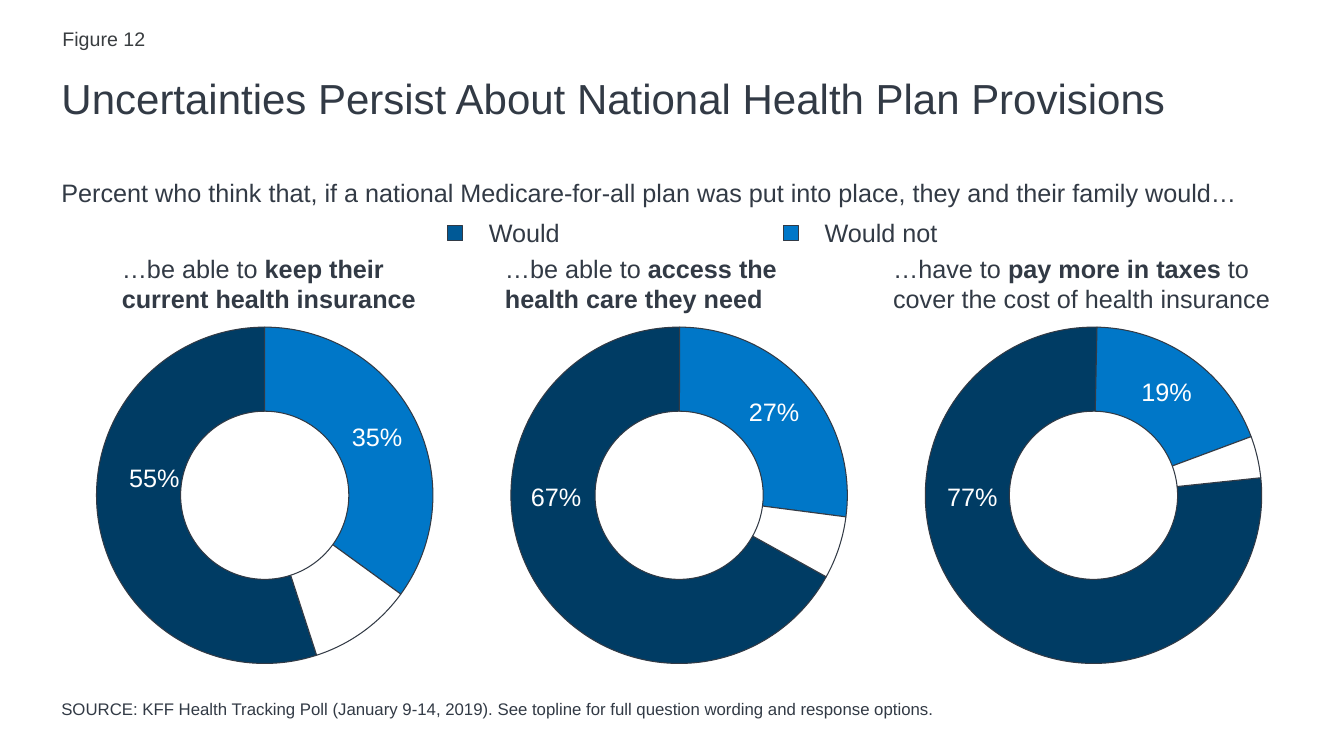
from lxml import etree
from pptx import Presentation
from pptx.chart.data import CategoryChartData
from pptx.dml.color import RGBColor
from pptx.enum.chart import XL_CHART_TYPE
from pptx.enum.shapes import MSO_SHAPE
from pptx.enum.text import MSO_ANCHOR, PP_ALIGN
from pptx.oxml.ns import qn
from pptx.util import Inches, Pt

DOUGHNUT = XL_CHART_TYPE.DOUGHNUT
RECTANGLE = MSO_SHAPE.RECTANGLE
TOP, BOTTOM = MSO_ANCHOR.TOP, MSO_ANCHOR.BOTTOM
LEFT = PP_ALIGN.LEFT

INK = RGBColor(0x32, 0x3A, 0x45)
GREY = RGBColor(0x39, 0x3D, 0x40)
NAVY = RGBColor(0x00, 0x3C, 0x64)
LEGEND_BLUE = RGBColor(0x00, 0x59, 0x96)
BLUE = RGBColor(0x00, 0x77, 0xC8)
WHITE = RGBColor(0xFF, 0xFF, 0xFF)
FONT = "Arial"

CHART_WIDTH, CHART_HEIGHT, CHART_PITCH = 7.1, 4.07, 4.11
RING_LAYOUT = {"layoutTarget": "inner", "xMode": "edge", "yMode": "edge",
               "x": 0.22, "y": 0.08, "w": 0.48, "h": 0.82}

# Caption box (left, width), caption runs (text, bold), shares, start angle, "Would" label shift
PROVISIONS = [
    ((1.11, 3.54), [("…be able to ", False), ("keep their current health insurance", True)],
     (0.55, 0.35, 0.10), 162, (0.02, -0.09)),
    ((4.91, 3.59), [("…be able to ", False), ("access the health care they need", True)],
     (0.67, 0.27, 0.06), 119, (-0.02, -0.15)),
    ((8.76, 4.31), [("…have to ", False), ("pay more in taxes ", True),
                    ("to cover the cost of health insurance", False)],
     (0.77, 0.19, 0.04), 84, (-0.05, -0.22)),
]


def set_format(target, values):
    for name, value in values.items():
        setattr(target, name, value)


def format_font(font, size, color, bold=False):
    set_format(font, {"name": FONT, "size": Pt(size), "bold": bold})
    font.color.rgb = color


def write_runs(text_frame, runs, size, color=INK, anchor=TOP):
    set_format(text_frame, {"word_wrap": True, "vertical_anchor": anchor})
    paragraph = text_frame.paragraphs[0]
    paragraph.alignment = LEFT
    for text, bold in runs:
        run = paragraph.add_run()
        run.text = text
        format_font(run.font, size, color, bold)


def add_text(slide, box, runs, size, color=INK, anchor=TOP):
    shape = slide.shapes.add_textbox(*map(Inches, box))
    write_runs(shape.text_frame, runs, size, color, anchor)


def add_heading(slide):
    title = slide.shapes.title
    set_format(title, {"left": Inches(0.51), "top": Inches(0.64),
                       "width": Inches(12.14), "height": Inches(0.92)})
    title.text_frame.margin_top = Inches(0.08)
    write_runs(title.text_frame,
               [("Uncertainties Persist About National Health Plan Provisions", False)], 30)
    add_text(slide, (0.52, 0.22, 3.11, 0.4), [("Figure 12", False)], 14, GREY)
    question = ("Percent who think that, if a national Medicare-for-all plan was put into place, "
                "they and their family would…")
    add_text(slide, (0.51, 1.71, 11.98, 0.4), [(question, False)], 18)


def add_legend_entry(slide, box, label, color):
    left, top, width, height = box
    marker = slide.shapes.add_shape(RECTANGLE, Inches(left), Inches(top + 0.13),
                                    Inches(0.15), Inches(0.15))
    marker.shadow.inherit = False
    marker.fill.solid()
    marker.fill.fore_color.rgb = color
    marker.line.color.rgb = INK
    marker.line.width = Pt(0.75)
    add_text(slide, (left + 0.31, top, width - 0.31, height), [(label, False)], 18)


def set_layout(parent, index, values):
    """Give a chart element a manual layout as its child at the index."""
    for existing in parent.findall(qn("c:layout")):
        parent.remove(existing)
    layout = etree.Element(qn("c:layout"))
    manual = etree.SubElement(layout, qn("c:manualLayout"))
    for name, value in values.items():
        etree.SubElement(manual, qn(f"c:{name}")).set("val", str(value))
    parent.insert(index, layout)


def add_ring(slide, box, shares, start_angle, label_shift):
    data = CategoryChartData(number_format="0%")
    data.categories = ["1", "2", "3"]
    data.add_series("Series 1", shares)
    chart = slide.shapes.add_chart(DOUGHNUT, *map(Inches, box), data).chart
    set_format(chart, {"has_title": False, "has_legend": False})
    format_font(chart.font, 10, INK)
    plot = chart.plots[0]
    plot.vary_by_categories = True
    series = plot.series[0]

    labels = series.data_labels
    set_format(labels, {"show_value": True, "show_percentage": False,
                        "number_format": "0%", "number_format_is_linked": False})
    format_font(labels.font, 18, WHITE)
    for index, color in enumerate((NAVY, BLUE, WHITE)):
        point = series.points[index]
        point.format.fill.solid()
        point.format.fill.fore_color.rgb = color
        point.format.line.color.rgb = INK
        point.format.line.width = Pt(0.75)
        format_font(point.data_label.font, 18, WHITE)

    root = chart.element
    would_label, _, other_label = root.findall(f".//{qn('c:dLbl')}")
    set_layout(would_label, 1, dict(zip("xy", label_shift)))
    other_label.find(qn("c:showVal")).set("val", "0")
    set_layout(root.find(f".//{qn('c:plotArea')}"), 0, RING_LAYOUT)
    root.find(f".//{qn('c:firstSliceAng')}").set("val", str(start_angle))
    root.find(f".//{qn('c:holeSize')}").set("val", "49")


def add_source(slide):
    source = ("SOURCE: KFF Health Tracking Poll (January 9-14, 2019). "
              "See topline for full question wording and response options.")
    add_text(slide, (0.51, 6.43, 10.04, 0.75), [(source, False)], 12, anchor=BOTTOM)


def main():
    presentation = Presentation()
    presentation.slide_width = Inches(13.33)
    presentation.slide_height = Inches(7.5)
    slide = presentation.slides.add_slide(presentation.slide_layouts[5])
    add_heading(slide)
    add_legend_entry(slide, (4.44, 2.11, 3.17, 0.4), "Would", LEGEND_BLUE)
    add_legend_entry(slide, (7.77, 2.11, 2.97, 0.4), "Would not", BLUE)
    for index, (caption, runs, shares, angle, shift) in enumerate(PROVISIONS):
        left, width = caption
        add_text(slide, (left, 2.46, width, 0.71), runs, 18)
        ring_box = (-0.64 + index * CHART_PITCH, 2.92, CHART_WIDTH, CHART_HEIGHT)
        add_ring(slide, ring_box, shares, angle, shift)
    add_source(slide)
    presentation.save("out.pptx")


if __name__ == "__main__":
    main()
